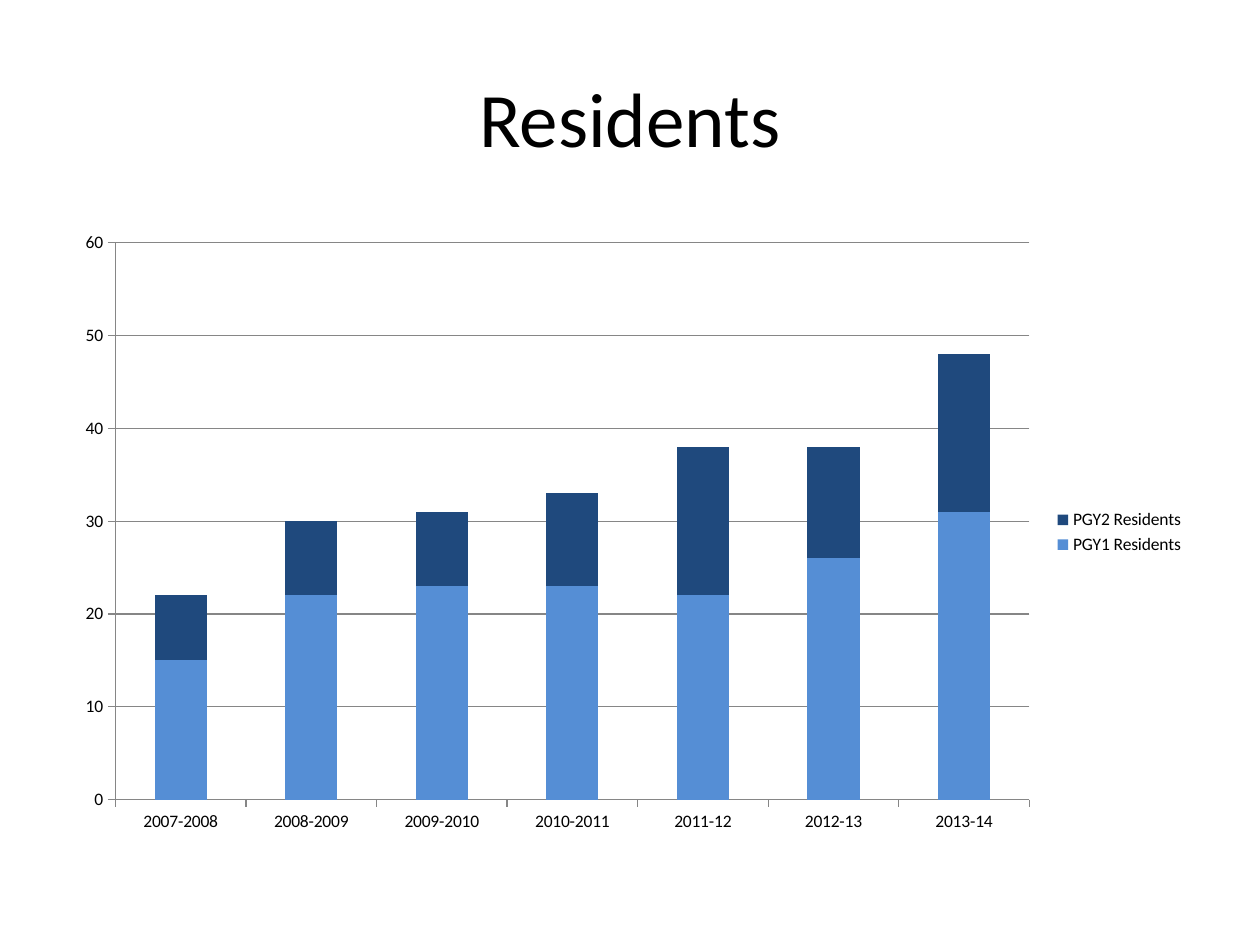
import pptx
import pptx.util
import pptx.chart.data
import pptx.dml.color
import pptx.enum.chart
import pptx.enum.text

# Content
TITLE = "Residents"
YEARS = ["2007-2008", "2008-2009", "2009-2010", "2010-2011",
         "2011-12", "2012-13", "2013-14"]
SERIES = [
    ("PGY1 Residents", "558ED5", [15, 22, 23, 23, 22, 26, 31]),
    ("PGY2 Residents", "1F497D", [7, 8, 8, 10, 16, 12, 17]),
]
FONT, INK, GREY = "Calibri", "000000", "868686"
WIDE, HIGH = 10, 7.5
EDGE = WIDE * 0.05


def paint(color, code):
    color.rgb = pptx.dml.color.RGBColor.from_string(code)


def style(font, size):
    font.name = FONT
    font.size = pptx.util.Pt(size)
    paint(font.color, INK)


def box(top, height):
    sides = (EDGE, top, WIDE - 2 * EDGE, height)
    return [pptx.util.Inches(side) for side in sides]


deck = pptx.Presentation()
deck.slide_width = pptx.util.Inches(WIDE)
deck.slide_height = pptx.util.Inches(HIGH)
slide = deck.slides.add_slide(deck.slide_layouts[6])

# Title
frame = slide.shapes.add_textbox(*box(HIGH * 0.04, 1.25)).text_frame
frame.word_wrap = True
frame.vertical_anchor = pptx.enum.text.MSO_ANCHOR.MIDDLE
head = frame.paragraphs[0]
head.text = TITLE
head.alignment = pptx.enum.text.PP_ALIGN.CENTER
style(head.font, 44)

# Stacked columns
data = pptx.chart.data.CategoryChartData()
data.categories = YEARS
for name, code, counts in SERIES:
    data.add_series(name, counts)
kind = pptx.enum.chart.XL_CHART_TYPE.COLUMN_STACKED
chart = slide.shapes.add_chart(kind, *box(1.75, HIGH * 0.66), data).chart
chart.has_title = False
style(chart.font, 10)
plot = chart.plots[0]
plot.gap_width, plot.overlap = 150, 100
plot.vary_by_categories = False
for bars, (name, code, counts) in zip(plot.series, SERIES):
    bars.format.fill.solid()
    paint(bars.format.fill.fore_color, code)

# Axes and grid
count = chart.value_axis
count.minimum_scale, count.maximum_scale, count.major_unit = 0, 60, 10
count.has_major_gridlines = True
for axis in (chart.category_axis, count):
    axis.major_tick_mark = pptx.enum.chart.XL_TICK_MARK.OUTSIDE
for part in (chart.category_axis, count, count.major_gridlines):
    paint(part.format.line.color, GREY)
    part.format.line.width = pptx.util.Pt(0.75)

# Legend
chart.has_legend = True
chart.legend.position = pptx.enum.chart.XL_LEGEND_POSITION.RIGHT
chart.legend.include_in_layout = False

deck.save("out.pptx")
